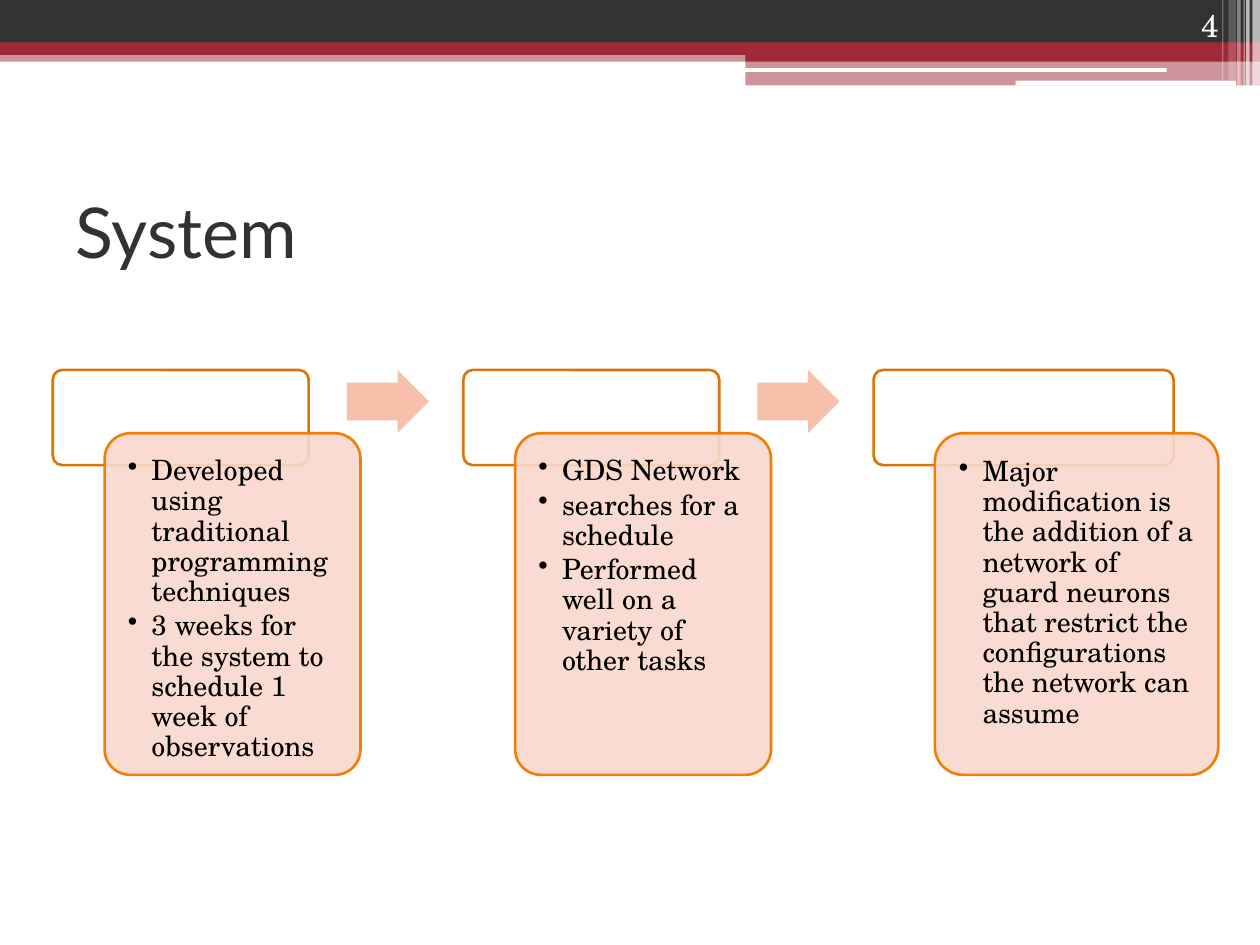
from lxml.etree import SubElement
from pptx import Presentation
from pptx.dml.color import RGBColor
from pptx.enum.shapes import MSO_SHAPE as SHAPE
from pptx.enum.text import MSO_ANCHOR as ANCHOR, PP_ALIGN as ALIGN
from pptx.oxml.ns import qn
from pptx.util import Pt

COLORS = {
    "dark": "323232", "red": "9F2936", "white": "FFFFFF", "black": "000000",
    "header_line": "DA7308", "card": "F9D8CC", "card_line": "F07F09", "arrow": "F6C0AB",
}
BODY_FONT = "TeX Gyre Schola"

prs = Presentation()
prs.slide_width, prs.slide_height = Pt(720), Pt(540)
s = prs.slides.add_slide(prs.slide_layouts[5])


def add_shape(kind, left, top, width, height, fill, alpha=100, line=None, adj=()):
    """Add a flat preset shape; alpha is the fill's opacity in percent."""
    sp = s.shapes.add_shape(kind, Pt(left), Pt(top), Pt(width), Pt(height))
    sp.shadow.inherit = False
    sp.fill.solid()
    sp.fill.fore_color.rgb = RGBColor.from_string(COLORS[fill])
    if alpha < 100:
        color = sp.fill._xPr.find(qn("a:solidFill"))[0]
        SubElement(color, qn("a:alpha"), val=str(alpha * 1000))
    if line:
        sp.line.color.rgb = RGBColor.from_string(COLORS[line])
        sp.line.width = Pt(1.5)
    else:
        sp.line.fill.background()
    for i, value in enumerate(adj):
        sp.adjustments[i] = value
    return sp


def write(tf, *lines, size=16, font=BODY_FONT, color="black", align=ALIGN.LEFT,
          anchor=ANCHOR.TOP, bullets=False):
    tf.word_wrap = True
    tf.vertical_anchor = anchor
    for i, text in enumerate(lines):
        p = tf.add_paragraph() if i else tf.paragraphs[0]
        p.alignment = align
        r = p.add_run()
        r.text = text
        r.font.size, r.font.name = Pt(size), font
        r.font.color.rgb = RGBColor.from_string(COLORS[color])
        if bullets:
            p.line_spacing, p.space_after = 0.9, Pt(2.4)
            pPr = p._p.get_or_add_pPr()
            pPr.set("marL", str(Pt(13.5)))
            pPr.set("indent", str(Pt(-13.5)))
            SubElement(pPr, qn("a:buChar"), char="•")


# Banner: left, top, width, height, colour, opacity
for *place, color, alpha in [
    (0, 28.8, 720, 6.5, "red", 50),
    (0, 0, 720, 24.5, "dark", 100),
    (0, 24.2, 720, 7.2, "red", 100),
    (426, 28.1, 294, 7.2, "red", 100),
    (426, 35.3, 294, 13.5, "red", 50),
]:
    add_shape(SHAPE.RECTANGLE, *place, color, alpha)

for place in [(425.5, 38.9, 241.2, 2.2), (580.3, 46.1, 126, 2.9)]:
    add_shape(SHAPE.ROUNDED_RECTANGLE, *place, "white", adj=[0.17])

# Stripes at the right edge: left, width, height, opacity
for left, width, height, alpha in [
    (715.7, 4.3, 49, 65), (712.1, 2, 49, 65), (710.6, 0.7, 49, 60),
    (707, 2, 49, 40), (702, 4.3, 46, 20), (698.4, 0.7, 46, 30),
]:
    add_shape(SHAPE.RECTANGLE, left, 0, width, height, "white", alpha)

title = s.shapes.title
title.left, title.top, title.width, title.height = Pt(36), Pt(90), Pt(648), Pt(84)
write(title.text_frame, "System", size=40, font="Lato", color="dark", anchor=ANCHOR.MIDDLE)

# Stages: header left and width, card left and width, bullets
stages = [
    (30.2, 146.2, 59.8, 146.2, [
        "Developed using traditional programming techniques",
        "3 weeks for the system to schedule 1 week of observations"]),
    (264.8, 146.2, 294.4, 146.2, [
        "GDS Network",
        "searches for a schedule",
        "Performed well on a variety of other tasks"]),
    (499.2, 171.4, 534.2, 162, [
        "Major modification is the addition of a network of guard neurons "
        "that restrict the configurations the network can assume"]),
]
for i, (header_left, header_width, card_left, card_width, bullets) in enumerate(stages):
    add_shape(SHAPE.ROUNDED_RECTANGLE, header_left, 211.4, header_width, 54.4, "white",
              line="header_line", adj=[0.1])
    card = add_shape(SHAPE.ROUNDED_RECTANGLE, card_left, 247.6, card_width, 195.2, "card",
                     alpha=90, line="card_line", adj=[0.1])
    tf = card.text_frame
    tf.margin_left = tf.margin_right = tf.margin_top = tf.margin_bottom = Pt(9)
    write(tf, *bullets, bullets=True)
    if i < len(stages) - 1:
        add_shape(SHAPE.RIGHT_ARROW, header_left + 168, 211.4, 47, 36, "arrow", adj=[0.6, 0.5])

number = s.shapes.add_textbox(Pt(643.7), Pt(0), Pt(59.8), Pt(28.8))
write(number.text_frame, "4", size=18, color="white", align=ALIGN.RIGHT, anchor=ANCHOR.BOTTOM)

prs.save("out.pptx")
